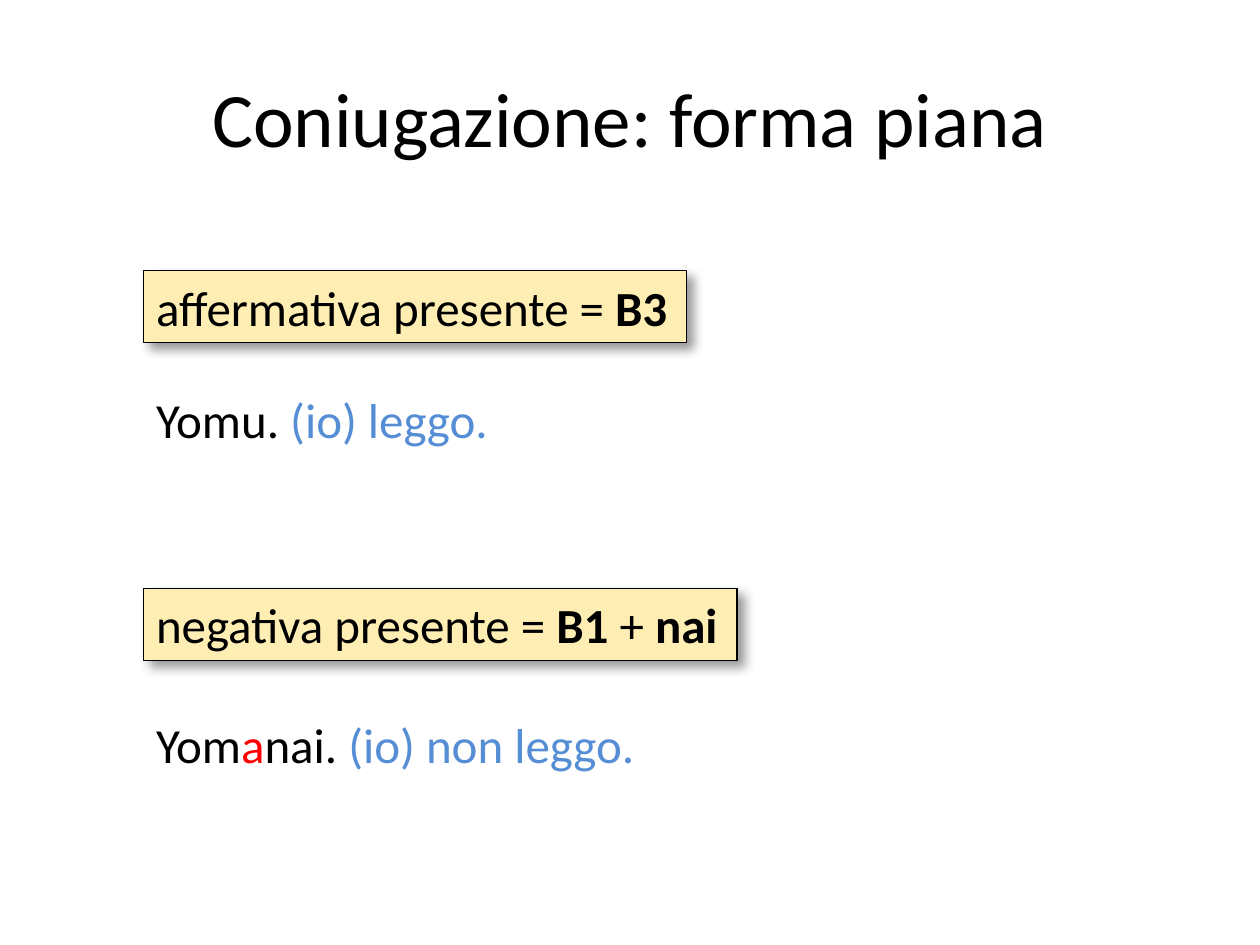
import pptx
import pptx.dml.color
import pptx.enum.shapes
import pptx.enum.text
import pptx.oxml
import pptx.oxml.ns
import pptx.util
from pptx.util import Inches

COLORS = {
    "text": "000000",
    "box": "FEEEB4",
    "translation": "558ED5",
    "highlight": "FF0000",
}
FONT = "Calibri"
LEFT = 1.14
LINE_HEIGHT = 0.57

# Each form: rule (top, width, runs) and example (top, width, runs).
# A run is its text and the format that differs from plain text.
BOLD = {"bold": True}
TRANSLATION = {"color": "translation"}
FORMS = [
    (
        (2.15, 4.31, [("affermativa presente = ", {}), ("B3", BOLD)]),
        (3.04, 2.86, [("Yomu. ", {}), ("(io) leggo.", TRANSLATION)]),
    ),
    (
        (4.67, 4.71, [("negativa presente = ", {}), ("B1", BOLD),
                      (" + ", {}), ("nai", BOLD)]),
        (5.62, 4.04, [("Yom", {}), ("a", {"color": "highlight"}),
                      ("nai. ", {}), ("(io) non leggo.", TRANSLATION)]),
    ),
]


def rgb(name):
    return pptx.dml.color.RGBColor.from_string(COLORS[name])


def add_run(paragraph, text, size=28, bold=False, color="text"):
    run = paragraph.add_run()
    run.text = text
    run.font.name = FONT
    run.font.size = pptx.util.Pt(size)
    run.font.bold = bold
    run.font.color.rgb = rgb(color)


def write_line(shape, runs):
    """Fill a shape with one unwrapped line that sets the shape's size."""
    frame = shape.text_frame
    frame.word_wrap = False
    frame.auto_size = pptx.enum.text.MSO_AUTO_SIZE.SHAPE_TO_FIT_TEXT
    frame.vertical_anchor = pptx.enum.text.MSO_ANCHOR.TOP
    paragraph = frame.paragraphs[0]
    paragraph.alignment = pptx.enum.text.PP_ALIGN.LEFT
    for text, text_format in runs:
        add_run(paragraph, text, **text_format)


def add_shadow(shape, blur=6, distance=5, angle=45, opacity=40):
    shape.shadow.inherit = False
    effects = shape._element.spPr.find(pptx.oxml.ns.qn("a:effectLst"))
    effects.append(pptx.oxml.parse_xml(
        f'<a:outerShdw {pptx.oxml.ns.nsdecls("a")} blurRad="{pptx.util.Pt(blur)}" '
        f'dist="{pptx.util.Pt(distance)}" dir="{angle * 60000}" algn="tl" rotWithShape="0">'
        f'<a:srgbClr val="{COLORS["text"]}"><a:alpha val="{opacity * 1000}"/></a:srgbClr>'
        '</a:outerShdw>'))


def add_title(slide, left, top, width, height):
    title = slide.shapes.add_textbox(
        Inches(left), Inches(top), Inches(width), Inches(height))
    frame = title.text_frame
    frame.word_wrap = True
    frame.vertical_anchor = pptx.enum.text.MSO_ANCHOR.MIDDLE
    paragraph = frame.paragraphs[0]
    paragraph.alignment = pptx.enum.text.PP_ALIGN.CENTER
    add_run(paragraph, "Coniugazione: forma piana", size=44)


def add_rule(slide, left, top, width, height, runs):
    rule = slide.shapes.add_shape(
        pptx.enum.shapes.MSO_SHAPE.RECTANGLE,
        Inches(left), Inches(top), Inches(width), Inches(height))
    rule.fill.solid()
    rule.fill.fore_color.rgb = rgb("box")
    rule.line.color.rgb = rgb("text")
    rule.line.width = pptx.util.Pt(0.75)
    add_shadow(rule)
    write_line(rule, runs)


def add_example(slide, left, top, width, height, runs):
    example = slide.shapes.add_textbox(
        Inches(left), Inches(top), Inches(width), Inches(height))
    write_line(example, runs)


def main():
    presentation = pptx.Presentation()
    presentation.slide_width = Inches(10)
    presentation.slide_height = Inches(7.5)
    slide = presentation.slides.add_slide(presentation.slide_layouts[6])
    add_title(slide, 0.5, 0.3, 9, 1.25)
    for rule, example in FORMS:
        for add_part, (top, width, runs) in ((add_rule, rule), (add_example, example)):
            add_part(slide, LEFT, top, width, LINE_HEIGHT, runs)
    presentation.save("out.pptx")


if __name__ == "__main__":
    main()
